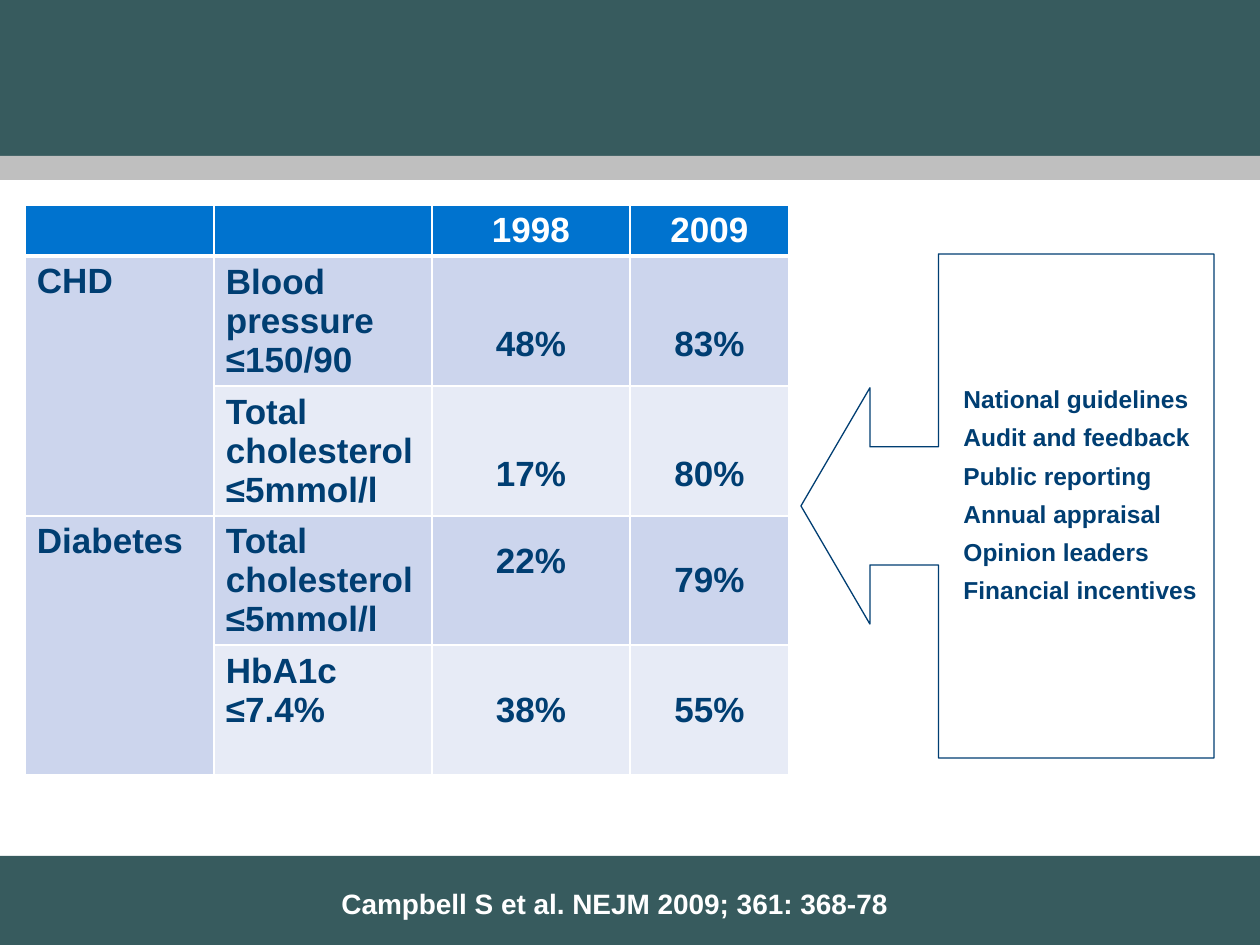
import pptx
import pptx.util
import pptx.dml.color
import pptx.enum.shapes
import pptx.enum.text
import pptx.oxml.ns
import lxml.etree

RGB = pptx.dml.color.RGBColor
SHAPES = pptx.enum.shapes.MSO_SHAPE
ALIGN = pptx.enum.text.PP_ALIGN
ANCHOR = pptx.enum.text.MSO_ANCHOR

TEAL = RGB(0x37, 0x5B, 0x5E)
GREY = RGB(0xBF, 0xBF, 0xBF)
WHITE = RGB(0xFF, 0xFF, 0xFF)
NAVY = RGB(0x00, 0x3E, 0x72)
BLUE = RGB(0x00, 0x73, 0xCF)
BAND_DARK = RGB(0xCC, 0xD5, 0xED)
BAND_LIGHT = RGB(0xE7, 0xEB, 0xF6)
PX = 914400 / 126


def px(*lengths):
    """Turn px into EMU."""
    return [pptx.util.Emu(round(length * PX)) for length in lengths]


def write(paragraph, text, size, color, align=ALIGN.LEFT):
    paragraph.alignment = align
    run = paragraph.add_run()
    run.text = text
    run.font.name = "Arial"
    run.font.size = pptx.util.Pt(size)
    run.font.bold = True
    run.font.color.rgb = color


prs = pptx.Presentation()
prs.slide_width, prs.slide_height = px(1260, 945)
slide = prs.slides.add_slide(prs.slide_layouts[6])

# Header and footer bands
for top, height, color in [(0, 163, TEAL), (156, 24, GREY), (856, 89, TEAL)]:
    band = slide.shapes.add_shape(SHAPES.RECTANGLE, *px(0, top, 1260, height))
    band.shadow.inherit = False
    band.fill.solid()
    band.fill.fore_color.rgb = color
    band.line.fill.background()

# Results: name, 1998 and 2009 cells
rows = [
    ["", "", "1998", "2009"],
    ["CHD", "Blood pressure ≤150/90", "48%", "83%"],
    ["", "Total cholesterol ≤5mmol/l", "17%", "80%"],
    ["Diabetes", "Total cholesterol ≤5mmol/l", "22%", "79%"],
    ["", "HbA1c ≤7.4%", "38%", "55%"],
]
column_widths = [189, 218, 198, 159]
row_heights = [51, 130, 130, 129, 130]
# Extra margin (top, bottom) that moves the text off the middle of its cell
offsets = {(1, 2): (46, 0), (1, 3): (46, 0), (2, 2): (46, 0), (2, 3): (46, 0),
           (3, 2): (0, 39), (4, 1): (0, 39)}

results = slide.shapes.add_table(
    5, 4, *px(25, 205, sum(column_widths), sum(row_heights))).table
for column, width in zip(results.columns, px(*column_widths)):
    column.width = width
for row, height in zip(results.rows, px(*row_heights)):
    row.height = height

for r, row in enumerate(rows):
    for c, text in enumerate(row):
        cell = results.cell(r, c)
        above, below = offsets.get((r, c), (0, 0))
        cell.margin_left, cell.margin_right = px(12, 12)
        cell.margin_top, cell.margin_bottom = px(6 + above, 6 + below)
        cell.vertical_anchor = ANCHOR.MIDDLE if r and c else ANCHOR.TOP
        for side in ("lnL", "lnR", "lnT", "lnB"):
            thick = (r, side) in [(0, "lnB"), (1, "lnT")]
            border = lxml.etree.SubElement(
                cell._tc.get_or_add_tcPr(), pptx.oxml.ns.qn("a:" + side),
                w=str(pptx.util.Pt(3 if thick else 1)))
            border_fill = lxml.etree.SubElement(border, pptx.oxml.ns.qn("a:solidFill"))
            lxml.etree.SubElement(
                border_fill, pptx.oxml.ns.qn("a:srgbClr"), val=str(WHITE))
        cell.fill.solid()
        cell.fill.fore_color.rgb = (
            BLUE if r == 0 else BAND_DARK if c == 0 or r % 2 else BAND_LIGHT)
        if text:
            write(cell.text_frame.paragraphs[0], text, 20,
                  NAVY if r else WHITE, ALIGN.CENTER if c > 1 else ALIGN.LEFT)
for r in (1, 3):
    results.cell(r, 0).merge(results.cell(r + 1, 0))

# Citation
citation = slide.shapes.add_textbox(*px(329, 880, 586, 47)).text_frame
citation.word_wrap = True
write(citation.paragraphs[0], "Campbell S et al. NEJM 2009; 361: 368-78", 16, WHITE)

# Callout with the drivers of improvement
drivers = slide.shapes.add_shape(
    SHAPES.LEFT_ARROW_CALLOUT, *px(801, 254, 413, 504))
for i, value in enumerate([0.286, 0.286, 0.167, 0.667]):
    drivers.adjustments[i] = value
drivers.shadow.inherit = False
drivers.fill.background()
drivers.line.color.rgb = NAVY
drivers.line.width = pptx.util.Pt(0.75)
frame = drivers.text_frame
frame.word_wrap = True
frame.vertical_anchor = ANCHOR.MIDDLE
frame.margin_left, frame.margin_right, frame.margin_top, frame.margin_bottom = px(
    25, 0, 6, 38)
for i, driver in enumerate([
        "National guidelines", "Audit and feedback", "Public reporting",
        "Annual appraisal", "Opinion leaders", "Financial incentives"]):
    paragraph = frame.add_paragraph() if i else frame.paragraphs[0]
    paragraph.line_spacing = 1.3
    write(paragraph, driver, 14, NAVY)

prs.save("out.pptx")
